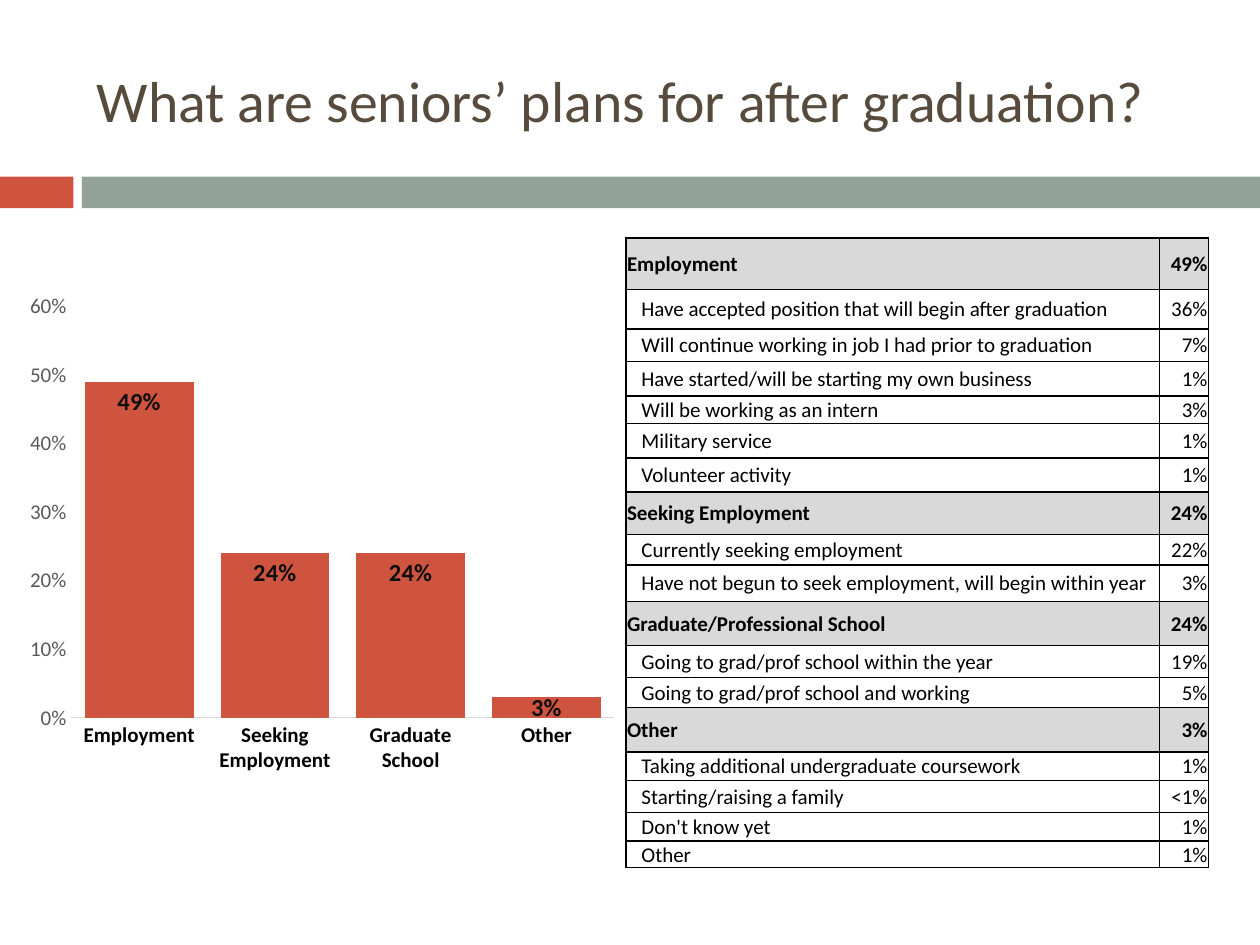
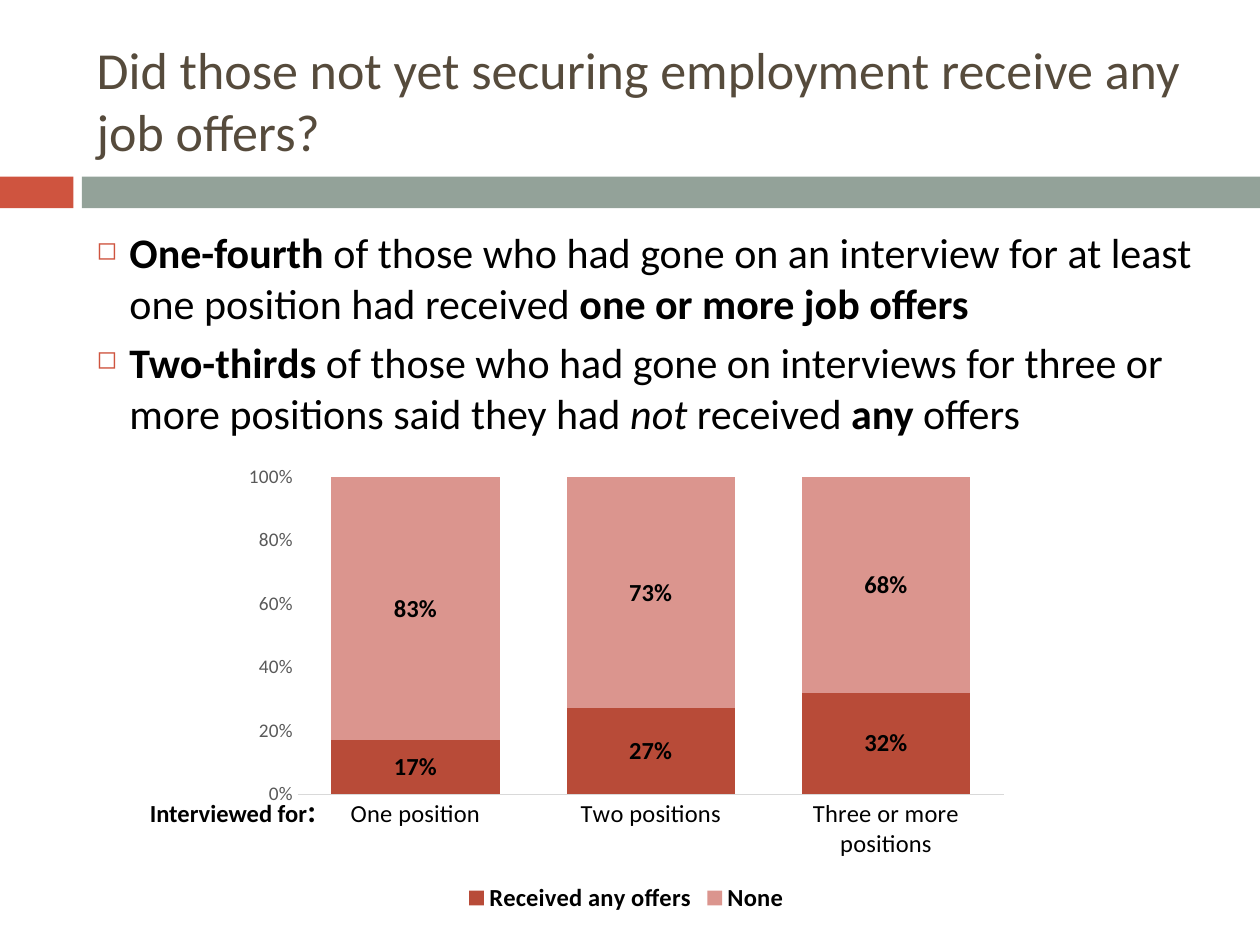
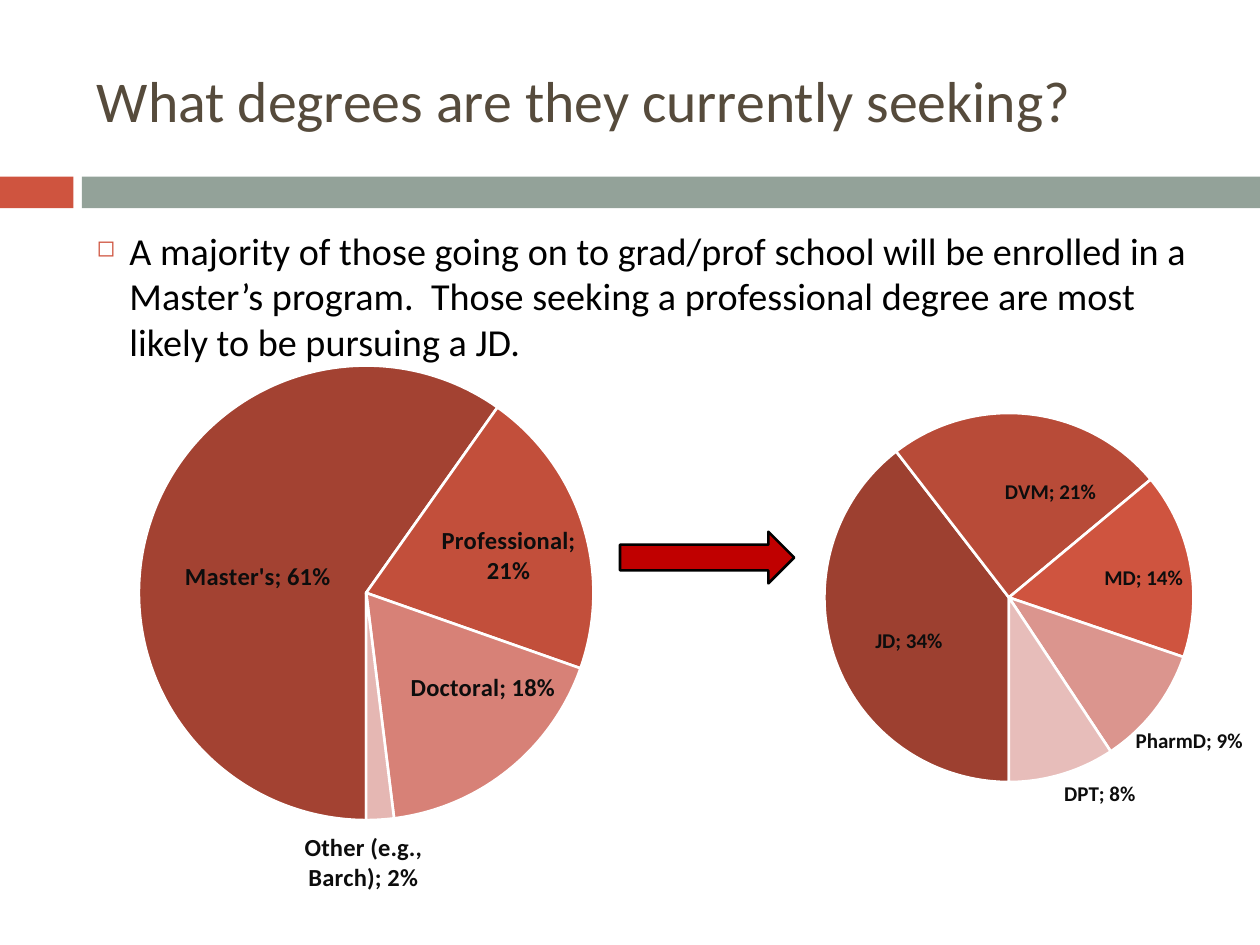
from lxml import etree
from pptx import Presentation
from pptx.chart.data import CategoryChartData
from pptx.dml.color import RGBColor
from pptx.enum.chart import XL_CHART_TYPE, XL_LABEL_POSITION, XL_LEGEND_POSITION, XL_TICK_MARK
from pptx.enum.shapes import MSO_SHAPE
from pptx.enum.text import MSO_ANCHOR, PP_ALIGN
from pptx.oxml import parse_xml
from pptx.oxml.ns import nsdecls, qn
from pptx.util import Cm, Pt

RECTANGLE, RIGHT_ARROW = MSO_SHAPE.RECTANGLE, MSO_SHAPE.RIGHT_ARROW
CLUSTERED, STACKED, PIE = (XL_CHART_TYPE.COLUMN_CLUSTERED, XL_CHART_TYPE.COLUMN_STACKED,
                           XL_CHART_TYPE.PIE)
CENTER, INSIDE, OUTSIDE = (XL_LABEL_POSITION.CENTER, XL_LABEL_POSITION.INSIDE_END,
                           XL_LABEL_POSITION.OUTSIDE_END)
LEGEND_BOTTOM = XL_LEGEND_POSITION.BOTTOM
NO_TICK = XL_TICK_MARK.NONE
MIDDLE, TOP = MSO_ANCHOR.MIDDLE, MSO_ANCHOR.TOP
LEFT, RIGHT = PP_ALIGN.LEFT, PP_ALIGN.RIGHT

FONT = "Calibri"
COLORS = {
    "accent": "CF543F", "band": "93A299", "title": "564B3C", "text": "000000",
    "label": "0D0D0D", "axis": "595959", "axis_line": "D9D9D9", "heading_row": "D9D9D9",
    "arrow": "C00000", "white": "FFFFFF", "brick": "B84B38", "rose": "DB958E",
    "masters": "A34232", "professional": "C24F3B", "doctoral": "D78177",
    "other_degree": "E5B7B3", "jd": "9D4030", "dpt": "E7BDBA",
}
TITLE_BOX = (1.7, 0.64, 22.66, 2.74)
BAND_BOX = (0, 3.56, 25.4, 0.64)
PERCENT = "0%"
WHOLE_PERCENT = "##\\%"

PLANS = [
    ("Employment", "49%", 1.04, True),
    ("Have accepted position that will begin after graduation", "36%", 0.79, False),
    ("Will continue working in job I had prior to graduation", "7%", 0.66, False),
    ("Have started/will be starting my own business", "1%", 0.69, False),
    ("Will be working as an intern", "3%", 0.56, False),
    ("Military service", "1%", 0.69, False),
    ("Volunteer activity", "1%", 0.69, False),
    ("Seeking Employment", "24%", 0.86, True),
    ("Currently seeking employment", "22%", 0.61, False),
    ("Have not begun to seek employment, will begin within year", "3%", 0.74, False),
    ("Graduate/Professional School", "24%", 0.89, True),
    ("Going to grad/prof school within the year", "19%", 0.64, False),
    ("Going to grad/prof school and working", "5%", 0.61, False),
    ("Other", "3%", 0.89, True),
    ("Taking additional undergraduate coursework", "1%", 0.58, False),
    ("Starting/raising a family", "<1%", 0.64, False),
    ("Don't know yet", "1%", 0.58, False),
    ("Other", "1%", 0.38, False),
]


def color(name):
    return RGBColor.from_string(COLORS[name])


def lengths(box):
    return [Cm(value) for value in box]


def set_values(target, values):
    for name, value in values.items():
        setattr(target, name, value)


def style_font(font, size, color_name="text", bold=False, italic=False):
    set_values(font, {"name": FONT, "size": Pt(size), "bold": bold, "italic": italic})
    font.color.rgb = color(color_name)


def paint(fill, color_name):
    fill.solid()
    fill.fore_color.rgb = color(color_name)


def add_filled_shape(slide, kind, box, color_name):
    shape = slide.shapes.add_shape(kind, *lengths(box))
    shape.shadow.inherit = False
    paint(shape.fill, color_name)
    shape.line.fill.background()
    return shape


def add_text(slide, box, paragraphs, size, color_name="text", anchor=TOP, wrap=True):
    frame = slide.shapes.add_textbox(*lengths(box)).text_frame
    set_values(frame, {"word_wrap": wrap, "vertical_anchor": anchor})
    for index, runs in enumerate(paragraphs):
        paragraph = frame.add_paragraph() if index else frame.paragraphs[0]
        for text, formats in runs:
            run = paragraph.add_run()
            run.text = text
            style_font(run.font, **{"size": size, "color_name": color_name, **formats})
    return frame


def add_bullets(slide, box, paragraphs, size):
    frame = add_text(slide, box, paragraphs, size)
    for paragraph in frame.paragraphs:
        paragraph.space_before = Pt(5.2)
        properties = paragraph._p.get_or_add_pPr()
        indents = {"marL": Cm(0.66), "indent": -Cm(0.66)}
        for name, value in indents.items():
            properties.set(name, str(value))
        bullet_color = etree.SubElement(properties, qn("a:buClr"))
        etree.SubElement(bullet_color, qn("a:srgbClr"), val=COLORS["accent"])
        etree.SubElement(properties, qn("a:buSzPct"), val="60000")
        etree.SubElement(properties, qn("a:buChar"), char="◻")


def add_band(slide, box):
    left, top, width, height = box
    square_width, bar_left = 1.48, 1.65
    add_filled_shape(slide, RECTANGLE, (left, top, square_width, height), "accent")
    add_filled_shape(slide, RECTANGLE, (left + bar_left, top, width - bar_left, height), "band")


def add_titled_slide(presentation, title, size=33):
    slide = presentation.slides.add_slide(presentation.slide_layouts[6])
    add_band(slide, BAND_BOX)
    add_text(slide, TITLE_BOX, [[(title, {})]], size, "title", MIDDLE)
    return slide


def add_cell_borders(cell):
    properties = cell._tc.get_or_add_tcPr()
    for index, side in enumerate(("lnL", "lnR", "lnT", "lnB")):
        properties.insert(index, parse_xml(
            f'<a:{side} {nsdecls("a")} w="{Pt(1)}"><a:solidFill>'
            f'<a:srgbClr val="{COLORS["text"]}"/></a:solidFill></a:{side}>'))


def add_plans_table(slide, box):
    share_width = 0.99
    table = slide.shapes.add_table(len(PLANS), 2, *lengths(box)).table
    set_values(table, {"first_row": False, "horz_banding": False})
    table.columns[0].width = Cm(box[2] - share_width)
    table.columns[1].width = Cm(share_width)
    for row, (plan, share, height, heading) in zip(table.rows, PLANS):
        row.height = Cm(height)
        indent = 0.02 if heading else 0.31
        entries = ((plan, LEFT, indent), (share, RIGHT, 0.02))
        for cell, (text, alignment, margin) in zip(row.cells, entries):
            set_values(cell, {"margin_left": Cm(margin), "margin_right": Cm(0.02),
                              "margin_top": Cm(0.02), "margin_bottom": 0,
                              "vertical_anchor": MIDDLE, "text": text})
            paragraph = cell.text_frame.paragraphs[0]
            paragraph.alignment = alignment
            style_font(paragraph.runs[0].font, 12, bold=heading)
            if heading:
                paint(cell.fill, "heading_row")
            else:
                cell.fill.background()
            add_cell_borders(cell)


def add_chart(slide, box, kind, categories, series, number_format):
    data = CategoryChartData(number_format=number_format)
    data.categories = categories
    for name, values in series:
        data.add_series(name, values)
    chart = slide.shapes.add_chart(kind, *lengths(box), data).chart
    set_values(chart, {"has_title": False, "has_legend": False})
    style_font(chart.font, 10)
    chart.plots[0].vary_by_categories = kind == PIE
    return chart


def style_labels(labels, number_format, size, color_name):
    set_values(labels, {"show_value": True, "number_format": number_format,
                        "number_format_is_linked": False})
    style_font(labels.font, size, color_name, True)


def place_point_label(point, position, size):
    style_font(point.data_label.font, size, "label", True)
    point.data_label.position = position


def add_column_chart(slide, box, kind, categories, series, fills, gap, axis_sizes,
                     bold_categories, label_color, maximum, major):
    chart = add_chart(slide, box, kind, categories, series, PERCENT)
    plot = chart.plots[0]
    plot.gap_width = gap
    if kind == STACKED:
        plot.overlap = 100
    for bars, fill_name in zip(plot.series, fills):
        paint(bars.format.fill, fill_name)
        style_labels(bars.data_labels, PERCENT, 14, label_color)
        bars.data_labels.position = CENTER if kind == STACKED else INSIDE
    category_axis, value_axis = chart.category_axis, chart.value_axis
    for axis in (category_axis, value_axis):
        set_values(axis, {"major_tick_mark": NO_TICK, "minor_tick_mark": NO_TICK,
                          "has_major_gridlines": False})
    style_font(category_axis.tick_labels.font, axis_sizes[0], bold=bold_categories)
    category_axis.format.line.color.rgb = color("axis_line")
    category_axis.format.line.width = Pt(0.75)
    style_font(value_axis.tick_labels.font, axis_sizes[1], "axis")
    set_values(value_axis, {"minimum_scale": 0, "maximum_scale": maximum, "major_unit": major})
    set_values(value_axis.tick_labels, {"number_format": PERCENT,
                                        "number_format_is_linked": False})
    value_axis.format.line.fill.background()
    return chart


def manual_layout(settings):
    layout = etree.Element(qn("c:layout"))
    manual = etree.SubElement(layout, qn("c:manualLayout"))
    for name, value in settings:
        etree.SubElement(manual, qn(f"c:{name}"), val=str(value))
    return layout


def add_pie_chart(slide, box, slices, label_size, plot_box):
    names, values, fills, positions, offsets = zip(*slices)
    chart = add_chart(slide, box, PIE, names, [("Series 1", values)], WHOLE_PERCENT)
    pie = chart.plots[0].series[0]
    style_labels(pie.data_labels, WHOLE_PERCENT, label_size, "label")
    for index, (fill_name, position) in enumerate(zip(fills, positions)):
        point = pie.points[index]
        paint(point.format.fill, fill_name)
        point.format.line.color.rgb = color("white")
        point.format.line.width = Pt(1.5)
        place_point_label(point, position, label_size)
    for label, offset in zip(chart.element.iter(qn("c:dLbl")), offsets):
        if any(offset):
            label.find(qn("c:idx")).addnext(manual_layout(zip("xy", offset)))
    for tag, value in (("c:showCatName", "1"), ("c:showLeaderLines", "0")):
        for flag in chart.element.iter(qn(tag)):
            flag.set("val", value)
    for flag in list(chart.element.iter(qn("c:showBubbleSize"))):
        separator = etree.Element(qn("c:separator"))
        separator.text = "; "
        flag.addnext(separator)
    plot_area = chart.element.find(".//" + qn("c:plotArea"))
    etree.SubElement(plot_area.find(qn("c:pieChart")), qn("c:firstSliceAng"), val="180")
    for layout in plot_area.findall(qn("c:layout")):
        plot_area.remove(layout)
    plot_area.insert(0, manual_layout([
        ("layoutTarget", "inner"), ("xMode", "edge"), ("yMode", "edge"),
        *zip("xywh", plot_box)]))


def add_plans_slide(presentation):
    slide = add_titled_slide(presentation, "What are seniors’ plans for after graduation?")
    add_plans_table(slide, (12.62, 4.8, 11.74, 12.7))
    chart = add_column_chart(
        slide, (0.36, 5.72, 12.27, 10.06), CLUSTERED,
        ["Employment", "Seeking Employment", "Graduate School", "Other"],
        [("Series 1", (0.49, 0.24, 0.24, 0.03))], ["accent"], gap=25, axis_sizes=(12, 12),
        bold_categories=True, label_color="label", maximum=0.6, major=0.1)
    place_point_label(chart.plots[0].series[0].points[3], CENTER, 14)


def add_offers_slide(presentation):
    slide = add_titled_slide(
        presentation, "Did those not yet securing employment receive any job offers?", 29.7)
    bold, italic = {"bold": True}, {"italic": True}
    add_bullets(slide, (1.7, 4.45, 22.66, 14.6), [
        [("One-fourth", bold),
         (" of those who had gone on an interview for at least one position had received ", {}),
         ("one or more job offers", bold)],
        [("Two-thirds", bold),
         (" of those who had gone on interviews for three or more positions said they had ", {}),
         ("not", italic), (" received ", {}), ("any", bold), (" offers", {})],
    ], 24)
    chart = add_column_chart(
        slide, (4.7, 9.19, 15.85, 9.32), STACKED,
        ["One position", "Two positions", "Three or more positions"],
        [("Received any offers", (0.17, 0.27, 0.32)), ("None", (0.83, 0.73, 0.68))],
        ["brick", "rose"], gap=40, axis_sizes=(14, 11), bold_categories=False,
        label_color="text", maximum=1, major=0.2)
    chart.has_legend = True
    set_values(chart.legend, {"position": LEGEND_BOTTOM, "include_in_layout": False})
    style_font(chart.legend.font, 14, bold=True)
    add_text(slide, (2.77, 15.82, 3.89, 1.02),
             [[("Interviewed for", bold), (":", {"bold": True, "size": 18})]], 14, wrap=False)


def add_degrees_slide(presentation):
    slide = add_titled_slide(presentation, "What degrees are they currently seeking?")
    add_bullets(slide, (1.7, 4.45, 22.66, 2.84), [[(
        "A majority of those going on to grad/prof school will be enrolled in a Master’s "
        "program.  Those seeking a professional degree are most likely to be pursuing a JD.",
        {})]], 21.8)
    arrow = add_filled_shape(slide, RIGHT_ARROW, (12.5, 10.72, 3.51, 1.04), "arrow")
    arrow.line.color.rgb = color("text")
    arrow.line.width = Pt(1.5)
    add_pie_chart(slide, (-1.71, 6.27, 17.32, 12.22), [
        ("Master's", 61, "masters", CENTER, (0, 0.03)),
        ("Professional", 21, "professional", INSIDE, (0, 0)),
        ("Doctoral", 18, "doctoral", INSIDE, (0.06, -0.1)),
        ("Other (e.g., Barch)", 2, "other_degree", OUTSIDE, (-0.02, 0.01)),
    ], 14, (0.26, 0.09, 0.53, 0.75))
    add_pie_chart(slide, (13.8, 7.29, 12.7, 9.42), [
        ("JD", 34, "jd", CENTER, (-0.02, 0.03)),
        ("DVM", 21, "brick", CENTER, (0.05, -0.03)),
        ("MD", 14, "accent", INSIDE, (0, 0)),
        ("PharmD", 9, "rose", OUTSIDE, (-0.04, 0.03)),
        ("DPT", 8, "dpt", OUTSIDE, (0, 0)),
    ], 12, (0.22, 0.11, 0.59, 0.79))


def main():
    presentation = Presentation()
    set_values(presentation, {"slide_width": Cm(25.4), "slide_height": Cm(19.05)})
    add_plans_slide(presentation)
    add_offers_slide(presentation)
    add_degrees_slide(presentation)
    presentation.save("out.pptx")


if __name__ == "__main__":
    main()
